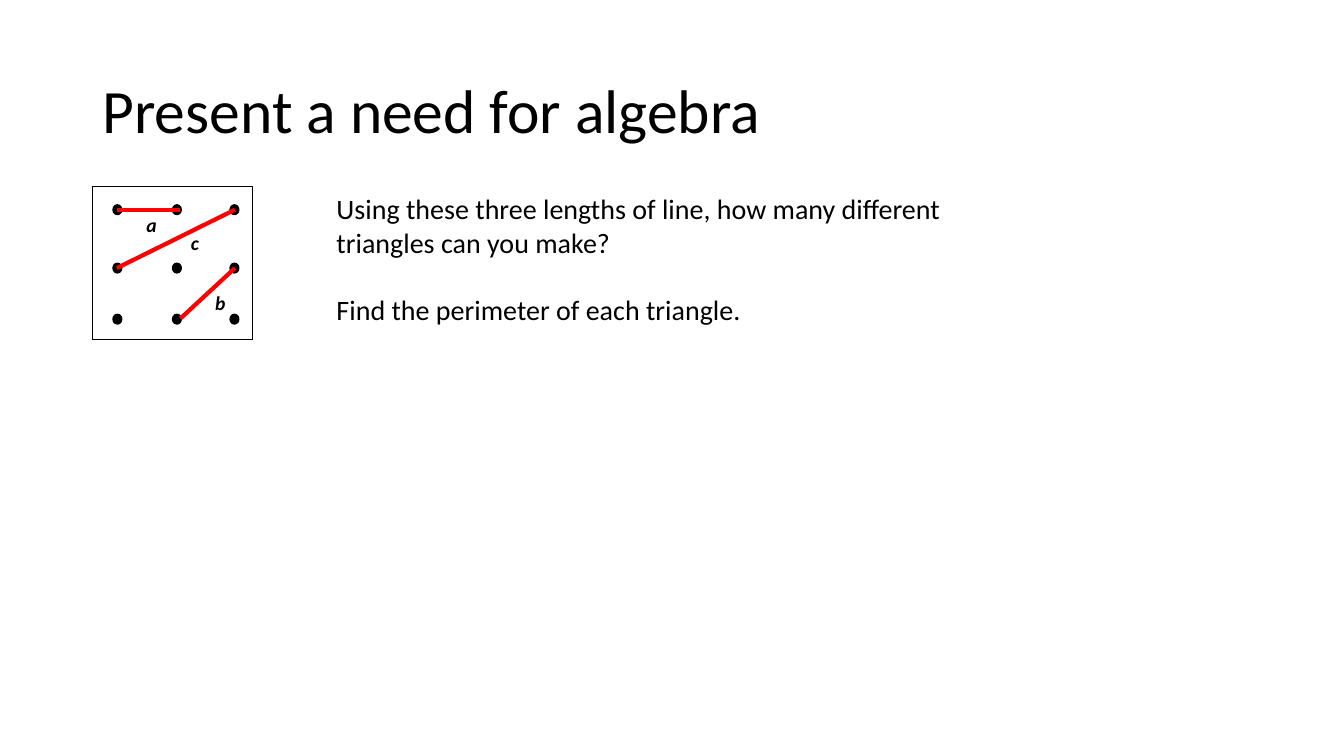
from lxml import etree
from pptx import Presentation
from pptx.dml.color import RGBColor
from pptx.enum.shapes import MSO_CONNECTOR as CONNECTOR, MSO_SHAPE as SHAPE
from pptx.enum.text import MSO_ANCHOR as ANCHOR, MSO_AUTO_SIZE as AUTO_SIZE, PP_ALIGN as ALIGN
from pptx.oxml.ns import qn
from pptx.util import Pt

COLORS = {"paper": "FFFFFF", "ink": "000000", "segment": "FF0000"}
FONT = "Calibri"

DOT_WIDTH, DOT_HEIGHT = 6.5, 7.2
DOT_COLUMNS = (80.6, 123.1, 164.2)
DOT_ROWS = (146.2, 187.9, 224.4)
FRAME_LEFT, FRAME_TOP, FRAME_RIGHT, FRAME_BOTTOM = 66.2, 133.2, 180.7, 242.6

LABELS = (("a", 98.6, 146.2), ("c", 129.6, 159.1), ("b", 147.6, 201.6))
SEGMENTS = (
    ((83.5, 149.8), (128.9, 149.8)),
    ((167.8, 149.8), (83.5, 191.5)),
    ((167.8, 191.5), (128.9, 227.5)),
)
QUESTIONS = (
    "Using these three lengths of line, how many different triangles can you make?",
    "Find the perimeter of each triangle.",
)


def color(name):
    return RGBColor.from_string(COLORS[name])


def write(para, text, size, bold=None, italic=None, align=ALIGN.LEFT,
          line_spacing=None, before=0, after=0):
    para.alignment = align
    para.line_spacing = line_spacing
    para.space_before, para.space_after = Pt(before), Pt(after)
    span = para.add_run()
    span.text = text
    font = span.font
    font.name, font.size, font.bold, font.italic = FONT, Pt(size), bold, italic
    font.color.rgb = color("ink")


def add_filled(shapes, kind, left, top, width, height, fill):
    shape = shapes.add_shape(kind, Pt(left), Pt(top), Pt(width), Pt(height))
    shape.shadow.inherit = False
    shape.fill.solid()
    shape.fill.fore_color.rgb = color(fill)
    return shape


def add_label(shapes, text, left, top):
    label = add_filled(shapes, SHAPE.RECTANGLE, left, top, 19.4, 22.3, "paper")
    label.line.fill.background()
    frame = label.text_frame
    frame.margin_left = frame.margin_right = 0
    frame.vertical_anchor = ANCHOR.TOP
    write(frame.paragraphs[0], text, 14, bold=True, italic=True,
          align=ALIGN.CENTER, line_spacing=1.15, after=10)


def add_dot(shapes, left, top):
    dot = add_filled(shapes, SHAPE.OVAL, left, top, DOT_WIDTH, DOT_HEIGHT, "ink")
    dot.line.color.rgb = color("ink")
    dot.line.width = Pt(0.75)


def add_line(shapes, start, end, stroke, width):
    line = shapes.add_connector(CONNECTOR.STRAIGHT, *map(Pt, start + end))
    line.line.color.rgb = color(stroke)
    line.line.width = Pt(width)
    etree.SubElement(line._element.spPr, qn("a:effectLst"))


def add_dot_grid(slide):
    """Draw the framed three-by-three dots with the labelled segments."""
    shapes = slide.shapes.add_group_shape().shapes
    for text, left, top in LABELS:
        add_label(shapes, text, left, top)
    for left in DOT_COLUMNS:
        for top in DOT_ROWS:
            add_dot(shapes, left, top)
    for y in (FRAME_BOTTOM, FRAME_TOP):
        add_line(shapes, (FRAME_LEFT, y), (FRAME_RIGHT, y), "ink", 0.75)
    for x in (FRAME_LEFT, FRAME_RIGHT):
        add_line(shapes, (x, FRAME_TOP), (x, FRAME_BOTTOM), "ink", 0.75)
    for start, end in SEGMENTS:
        add_line(shapes, start, end, "segment", 3)


def set_title(slide, text):
    title = slide.shapes.title
    title.left, title.top, title.width, title.height = map(Pt, (66, 28.8, 828, 104.4))
    frame = title.text_frame
    frame.auto_size = AUTO_SIZE.NONE
    frame.vertical_anchor = ANCHOR.MIDDLE
    write(frame.paragraphs[0], text, 44, line_spacing=0.9)


def add_questions(slide):
    box = slide.shapes.add_textbox(Pt(233.3), Pt(133.2), Pt(460), Pt(104.4))
    frame = box.text_frame
    frame.word_wrap = True
    frame.auto_size = AUTO_SIZE.SHAPE_TO_FIT_TEXT
    first, second = QUESTIONS
    write(frame.paragraphs[0], first, 20)
    write(frame.add_paragraph(), second, 20, before=24.4)


def main():
    deck = Presentation()
    deck.slide_width, deck.slide_height = Pt(960), Pt(540)
    page = deck.slides.add_slide(deck.slide_layouts.get_by_name("Title Only"))
    set_title(page, "Present a need for algebra")
    add_dot_grid(page)
    add_questions(page)
    deck.save("out.pptx")


if __name__ == "__main__":
    main()
